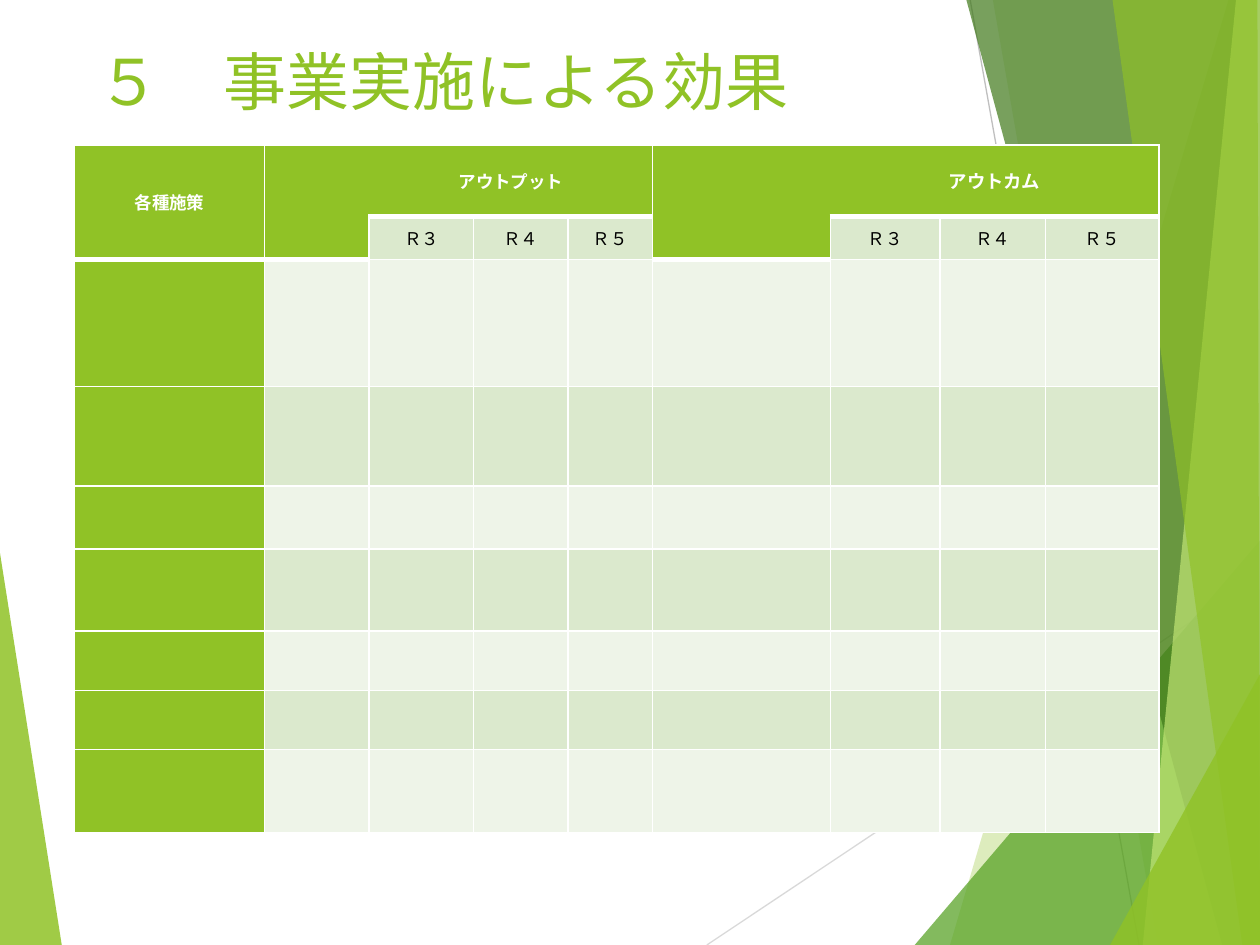
from lxml.etree import SubElement
from pptx import Presentation
from pptx.dml.color import RGBColor
from pptx.enum.shapes import MSO_CONNECTOR
from pptx.enum.text import MSO_ANCHOR, PP_ALIGN
from pptx.oxml import parse_xml
from pptx.oxml.ns import nsdecls, qn
from pptx.util import Inches, Pt

GREEN, PALE, MIST, WHITE, BLACK = "90C226", "DBE9CD", "EEF4E8", "FFFFFF", "000000"
COLUMNS = [1.51, 0.83, 0.83, 0.75, 0.67, 1.41, 0.87, 0.84, 0.9]
ROWS = [0.57, 0.34, 1.01, 0.79, 0.5, 0.65, 0.47, 0.47, 0.66]
TALL_HEADERS = (0, 1, 5)
WIDE_HEADERS = (2, 6)
HEADINGS = {0: ("各種施策", 10), 2: ("アウトプット", 10), 6: ("アウトカム", 10.5)}
YEARS = ["Ｒ３", "Ｒ４", "Ｒ５"]

LEFT_WEDGE = [(0, 4.39), (0.49, 7.5), (0, 7.5)]
RIGHT_FACETS = [
    ([(9.75, 0), (7.54, 7.5), (10, 7.5), (10, 0)], GREEN, 30),
    ([(7.88, 0), (9.19, 7.5), (10, 7.5), (10, 0)], GREEN, 20),
    ([(7.26, 7.5), (10, 4.29), (10, 7.5)], "54A021", 72),
    ([(7.67, 0), (9.7, 7.5), (10, 7.5), (10, 0)], "3F7819", 70),
    ([(9.81, 0), (9.07, 7.5), (10, 7.5), (10, 0)], "C0E474", 70),
    ([(8.83, 0), (9.86, 7.5), (10, 7.5), (9.98, 0)], GREEN, 65),
    ([(8.81, 7.5), (10, 5.35), (10, 7.5)], GREEN, 80),
]


def color(value):
    """Turn a hex string into a colour."""
    return RGBColor.from_string(value)


def write(frame, text, size=10, font="Arial", ink=BLACK, bold=False, align=PP_ALIGN.CENTER):
    """Put one formatted line of text into a text frame."""
    paragraph = frame.paragraphs[0]
    paragraph.alignment = align
    run = paragraph.add_run()
    run.text = text
    run.font.size, run.font.name, run.font.bold = Pt(size), font, bold
    run.font.color.rgb = color(ink)


def rule_below(row, column):
    """Give the width of the line under a cell."""
    return 3 if row == (1 if column in TALL_HEADERS else 0) else 1


def cell_color(row, column):
    """Choose a cell's fill from its place in the table."""
    if row == 0 or column == 0 or (row == 1 and column in TALL_HEADERS):
        return GREEN
    return PALE if row % 2 else MIST


class EffectSlide:
    """Hold the style and the slide, and draw each kind of element."""

    def __init__(self, presentation):
        """Add a title-only slide."""
        self.slide = presentation.slides.add_slide(presentation.slide_layouts[5])
        self.shapes = self.slide.shapes
        self.heading_font = "Roboto"

    def facet(self, points, fill, opacity):
        """Draw a translucent polygon."""
        corners = [(Inches(x), Inches(y)) for x, y in points]
        builder = self.shapes.build_freeform(*corners[0], scale=1.0)
        builder.add_line_segments(corners[1:], close=True)
        facet = builder.convert_to_shape()
        facet.shadow.inherit = False
        facet.fill.solid()
        facet.fill.fore_color.rgb = color(fill)
        facet.line.fill.background()
        shade = facet.fill._xPr.find(qn("a:solidFill"))[0]
        SubElement(shade, qn("a:alpha"), val=str(opacity * 1000))

    def thin_line(self, start, end, ink):
        """Draw a thin straight line."""
        ends = [Inches(value) for value in (*start, *end)]
        line = self.shapes.add_connector(MSO_CONNECTOR.STRAIGHT, *ends)
        line.line.color.rgb = color(ink)
        line.line.width = Pt(0.75)
        SubElement(line._element.spPr, qn("a:effectLst"))

    def title(self, text):
        """Place and fill the title in front of the background."""
        title = self.shapes.title
        self.shapes._spTree.append(title._element)
        title.left, title.top = Inches(0.67), Inches(0.29)
        title.width, title.height = Inches(6.94), Inches(1.44)
        title.text_frame.word_wrap = True
        title.text_frame.vertical_anchor = MSO_ANCHOR.TOP
        write(title.text_frame, text, size=36, font=self.heading_font, ink=GREEN,
              align=PP_ALIGN.LEFT)

    def borders(self, cell, widths):
        """Give a cell white left, right, top and bottom lines; zero hides one."""
        for index, (side, width) in enumerate(zip("LRTB", widths)):
            paint = f'<a:solidFill><a:srgbClr val="{WHITE}"/></a:solidFill>' if width else "<a:noFill/>"
            border = f'<a:ln{side} {nsdecls("a")} w="{Pt(width)}">{paint}</a:ln{side}>'
            cell._tc.get_or_add_tcPr().insert(index, parse_xml(border))

    def table(self):
        """Draw the table of outputs and outcomes."""
        frame = self.shapes.add_table(len(ROWS), len(COLUMNS), Inches(0.59), Inches(1.15),
                                      Inches(sum(COLUMNS)), Inches(sum(ROWS)))
        table = frame.table
        table.first_row = table.horz_banding = False
        for column, width in zip(table.columns, COLUMNS):
            column.width = Inches(width)
        for row, height in zip(table.rows, ROWS):
            row.height = Inches(height)
        for row in range(len(ROWS)):
            for column in range(len(COLUMNS)):
                self.cell(table.cell(row, column), row, column)
        for column in TALL_HEADERS:
            table.cell(0, column).merge(table.cell(1, column))
        for column in WIDE_HEADERS:
            table.cell(0, column).merge(table.cell(0, column + 2))
            for offset, year in enumerate(YEARS):
                write(table.cell(1, column + offset).text_frame, year)
        for column, (text, size) in HEADINGS.items():
            write(table.cell(0, column).text_frame, text, size=size, ink=WHITE, bold=True)

    def cell(self, cell, row, column):
        """Format one cell by its place in the table."""
        cell.margin_left = cell.margin_right = Inches(0.07)
        cell.margin_top = cell.margin_bottom = 0
        cell.vertical_anchor = MSO_ANCHOR.MIDDLE
        cell.fill.solid()
        cell.fill.fore_color.rgb = color(cell_color(row, column))
        left = 0 if row == 0 and column in WIDE_HEADERS else 1
        right = 0 if row == 0 and column + 1 in WIDE_HEADERS else 1
        bottom = 3 if row == 0 and column in TALL_HEADERS else rule_below(row, column)
        self.borders(cell, (left, right, rule_below(row - 1, column), bottom))


def main():
    """Build and save the slide."""
    presentation = Presentation()
    presentation.slide_width, presentation.slide_height = Inches(10), Inches(7.5)
    page = EffectSlide(presentation)
    page.facet(LEFT_WEDGE, GREEN, 85)
    page.thin_line((5.61, 7.5), (10, 4.57), "D9D9D9")
    page.thin_line((7.7, 0), (9.04, 7.5), "BFBFBF")
    for points, fill, opacity in RIGHT_FACETS:
        page.facet(points, fill, opacity)
    page.title("５　事業実施による効果")
    page.table()
    presentation.save("out.pptx")


if __name__ == "__main__":
    main()
